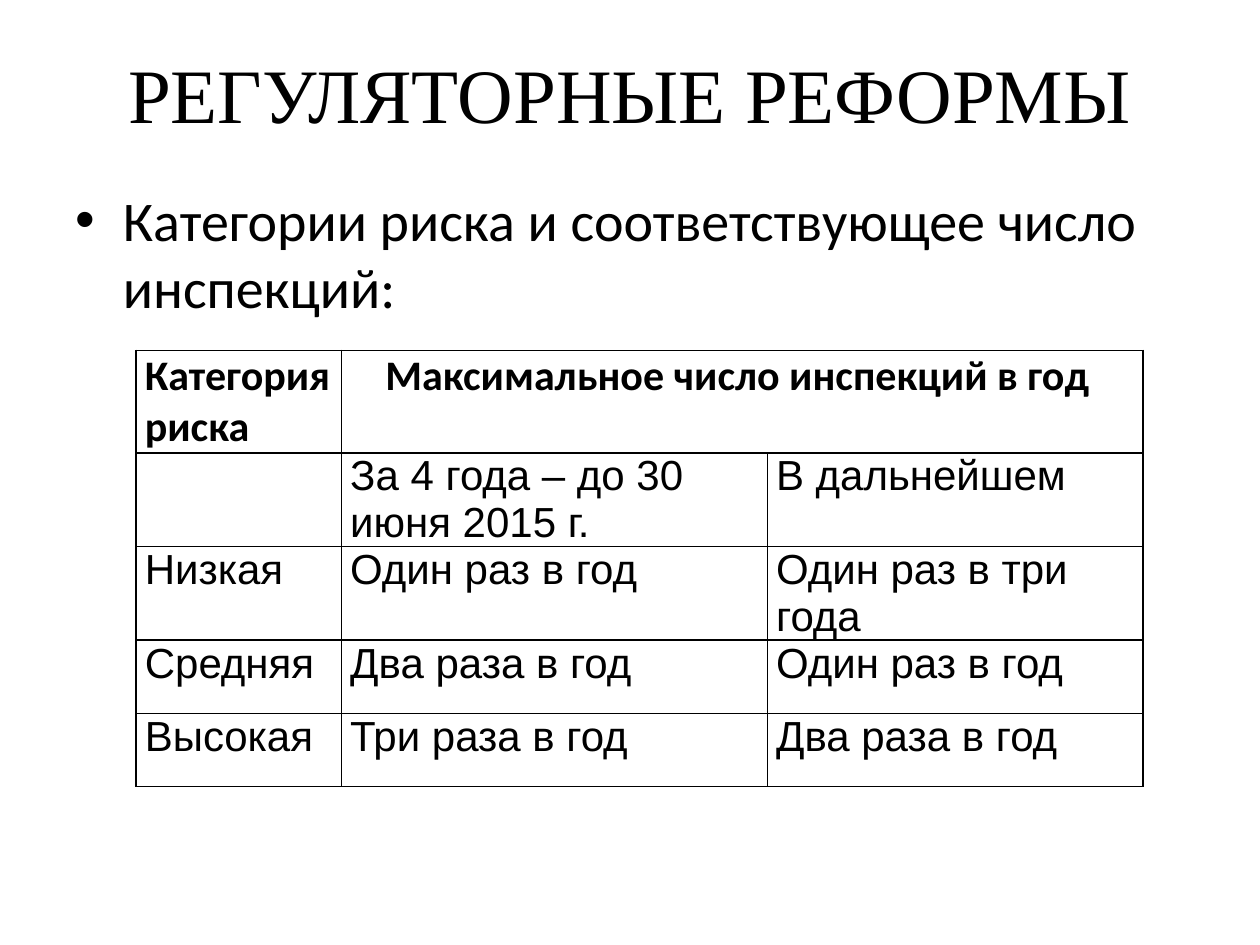
from lxml.etree import SubElement as Sub
from pptx import Presentation
from pptx.dml.color import RGBColor
from pptx.enum.text import MSO_ANCHOR as Anchor, PP_ALIGN as Align
from pptx.oxml.ns import qn
from pptx.util import Inches, Pt

BLACK = RGBColor(0, 0, 0)
COLS = (1.63, 3.38, 2.98)
ROWS = (0.73, 0.73, 0.73, 0.58, 0.58)
CELLS = (
    ("Категория риска", "Максимальное число инспекций в год ", ""),
    ("", "За 4 года – до 30 июня 2015 г.", "В дальнейшем"),
    ("Низкая", "Один раз в год", "Один раз в три года"),
    ("Средняя", "Два раза в год", "Один раз в год"),
    ("Высокая", "Три раза в год", "Два раза в год"),
)


def write(frame, text, face, size, bold=False, align=None):
    """Fill a text frame with one styled paragraph."""
    frame.text = text
    para = frame.paragraphs[0]
    para.alignment = align
    font = para.font
    font.name, font.size, font.bold = face, Pt(size), bold
    font.color.rgb = BLACK


def place(shape, box):
    """Move a shape to a box given in inches."""
    shape.left, shape.top, shape.width, shape.height = map(Inches, box)


def add_title(slide, box):
    """Place the slide title."""
    title = slide.shapes.title
    place(title, box)
    title.text_frame.vertical_anchor = Anchor.MIDDLE
    write(title.text_frame, "РЕГУЛЯТОРНЫЕ РЕФОРМЫ", "Times New Roman", 44,
          align=Align.CENTER)


def add_list(slide, box):
    """Place the bulleted lead-in."""
    body = slide.placeholders[1]
    place(body, box)
    write(body.text_frame, "Категории риска и соответствующее число инспекций:",
          "Calibri", 32)


def frame_cell(cell):
    """Give a cell thin black borders, no fill and tight margins."""
    props = cell._tc.get_or_add_tcPr()
    for side in ("lnL", "lnR", "lnT", "lnB"):
        line = Sub(props, qn(f"a:{side}"), w=str(Pt(1)))
        fill = Sub(line, qn("a:solidFill"))
        Sub(fill, qn("a:srgbClr"), val=str(BLACK))
    cell.fill.background()
    cell.margin_left = cell.margin_right = Inches(0.07)
    cell.margin_top = cell.margin_bottom = 0


def add_grid(slide, box):
    """Place the table of risk categories and inspection counts."""
    table = slide.shapes.add_table(len(ROWS), len(COLS),
                                   *map(Inches, box)).table
    table.first_row = table.horz_banding = False
    for col, width in zip(table.columns, COLS):
        col.width = Inches(width)
    for r, (row, height) in enumerate(zip(table.rows, ROWS)):
        row.height = Inches(height)
        head = r == 0
        for c, (cell, text) in enumerate(zip(row.cells, CELLS[r])):
            frame_cell(cell)
            if text:
                write(cell.text_frame, text, "Calibri" if head else "Arial",
                      24, head, Align.CENTER if head and c else None)
    table.cell(0, 1).merge(table.cell(0, 2))


def main():
    """Build and save the slide."""
    deck = Presentation()
    deck.slide_width, deck.slide_height = Inches(10), Inches(7.5)
    slide = deck.slides.add_slide(deck.slide_layouts[1])
    add_title(slide, (0.5, 0.3, 9, 0.87))
    add_list(slide, (0.5, 1.42, 9, 5.28))
    add_grid(slide, (1.08, 2.78, sum(COLS), sum(ROWS)))
    deck.save("out.pptx")


if __name__ == "__main__":
    main()
